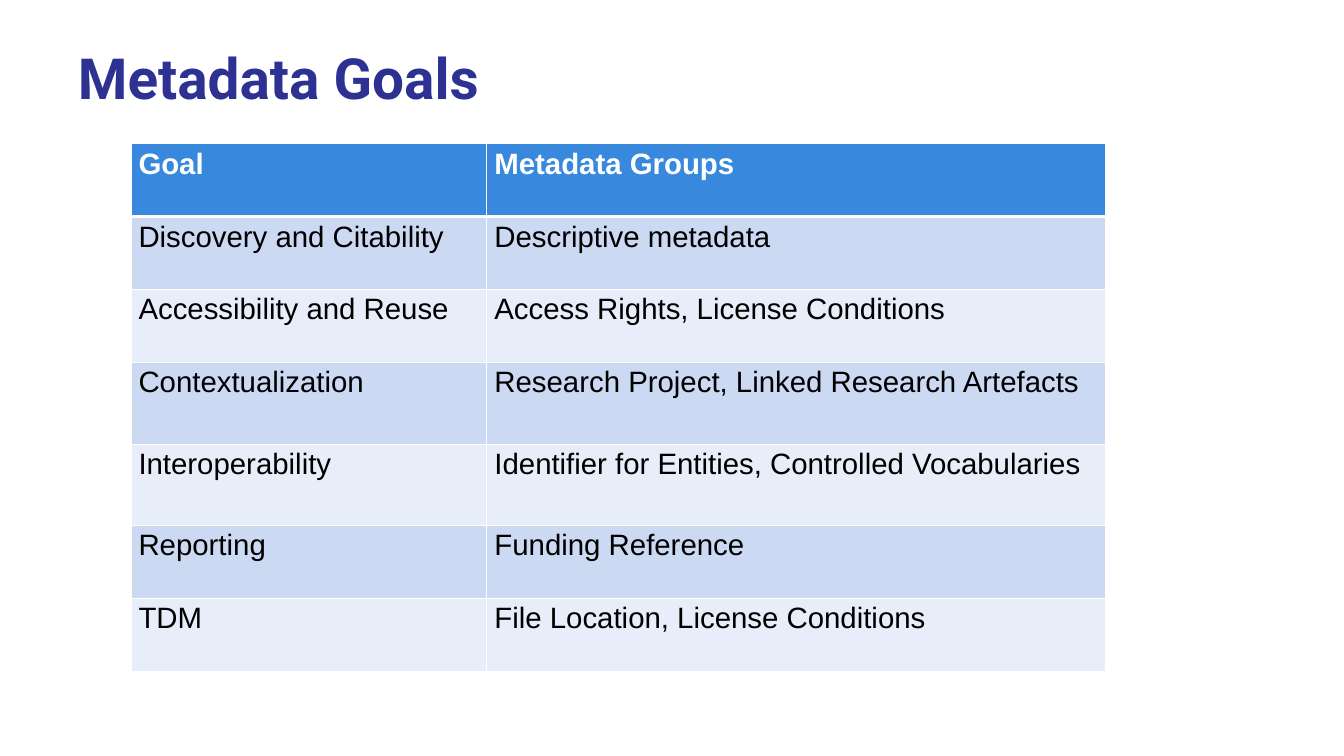
from lxml import etree
from pptx import Presentation
from pptx.dml.color import RGBColor
from pptx.enum.text import MSO_ANCHOR
from pptx.oxml.ns import qn
from pptx.util import Cm, Pt

MIDDLE = MSO_ANCHOR.MIDDLE

# Content
TITLE = "Metadata Goals"
GOALS = [
    ("Goal", "Metadata Groups"),
    ("Discovery and Citability", "Descriptive metadata"),
    ("Accessibility and Reuse", "Access Rights, License Conditions"),
    ("Contextualization", "Research Project, Linked Research Artefacts"),
    ("Interoperability", "Identifier for Entities, Controlled Vocabularies"),
    ("Reporting", "Funding Reference"),
    ("TDM", "File Location, License Conditions"),
]
COLORS = {
    "title": "2D3292",
    "header": "3889DE",
    "odd": "CCD9F2",
    "even": "E7EDF9",
    "light": "FEFFFF",
    "text": "000000",
}

# Layout in centimetres
COLUMN_WIDTHS = (11.96, 20.8)
ROW_HEIGHT, TALL_HEIGHT = 2.45, 2.74
TALL_ROWS = (3, 4)
HEIGHTS = [TALL_HEIGHT if row in TALL_ROWS else ROW_HEIGHT for row in range(len(GOALS))]


def write(frame, text, *, size, color, font="Arial", bold=False):
    span = frame.paragraphs[0].add_run()
    span.text = text
    span.font.name = font
    span.font.size = Pt(size)
    span.font.bold = bold
    span.font.color.rgb = RGBColor.from_string(color)


def add_borders(cell, top, bottom):
    properties = cell._tc.get_or_add_tcPr()
    for tag, points in (("a:lnL", 1), ("a:lnR", 1), ("a:lnT", top), ("a:lnB", bottom)):
        line = etree.SubElement(properties, qn(tag), w=str(Pt(points)))
        fill = etree.SubElement(line, qn("a:solidFill"))
        etree.SubElement(fill, qn("a:srgbClr"), val=COLORS["light"])


deck = Presentation()
deck.slide_width, deck.slide_height = Cm(45.16), Cm(25.4)
page = deck.slides.add_slide(deck.slide_layouts[6])

# Title
box = page.shapes.add_textbox(Cm(2.62), Cm(1), Cm(36.95), Cm(3.18))
frame = box.text_frame
frame.word_wrap = True
frame.vertical_anchor = MIDDLE
frame.margin_left = frame.margin_right = frame.margin_top = frame.margin_bottom = 0
write(frame, TITLE, size=54, color=COLORS["title"], font="Roboto", bold=True)

# Table of goals
table = page.shapes.add_table(
    len(GOALS), len(COLUMN_WIDTHS), Cm(4.4), Cm(4.83),
    Cm(sum(COLUMN_WIDTHS)), Cm(sum(HEIGHTS)),
).table
for column, width in zip(table.columns, COLUMN_WIDTHS):
    column.width = Cm(width)

for row, (texts, height) in enumerate(zip(GOALS, HEIGHTS)):
    table.rows[row].height = Cm(height)
    header = row == 0
    band = "header" if header else "odd" if row % 2 else "even"
    for column, text in enumerate(texts):
        cell = table.cell(row, column)
        add_borders(cell, top=3 if row == 1 else 1, bottom=3 if header else 1)
        cell.fill.solid()
        cell.fill.fore_color.rgb = RGBColor.from_string(COLORS[band])
        write(cell.text_frame, text, size=28, bold=header,
              color=COLORS["light" if header else "text"])

deck.save("out.pptx")
